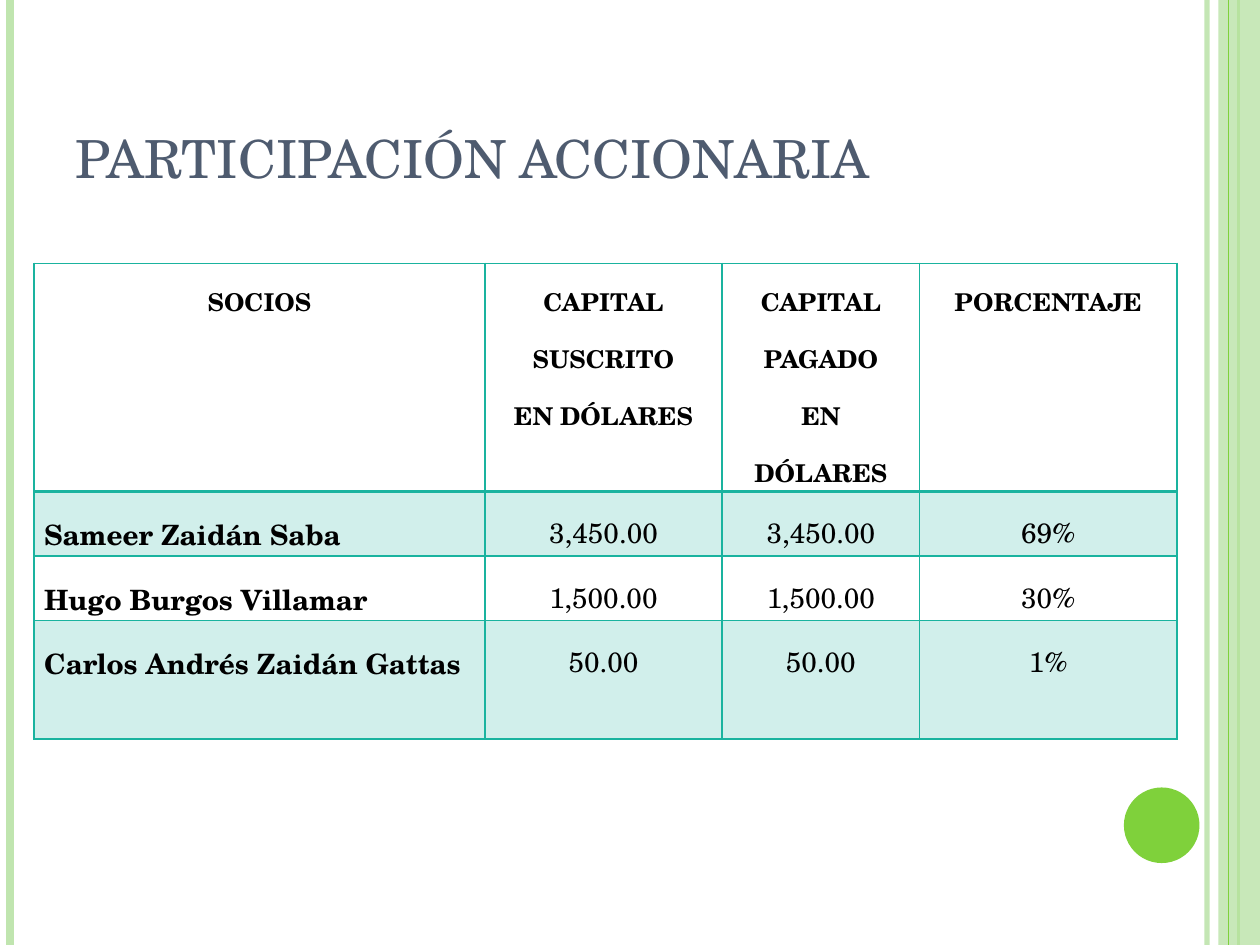
import dataclasses

import pptx
import pptx.dml.color
import pptx.enum.shapes
import pptx.enum.text
import pptx.oxml
import pptx.oxml.ns
import pptx.util

Inches = pptx.util.Inches
Pt = pptx.util.Pt
RGB = pptx.dml.color.RGBColor.from_string
ALIGN = pptx.enum.text.PP_ALIGN
SHAPE = pptx.enum.shapes.MSO_SHAPE


@dataclasses.dataclass(frozen=True)
class Theme:
    font: str = "TeX Gyre Schola"
    title: str = "4E5B6F"
    text: str = "000000"
    green: str = "7FD13B"
    pale_green: str = "C0E5AF"
    teal: str = "1AB39F"
    title_size: int = 30
    header_size: int = 14
    body_size: int = 16


THEME = Theme()

HEADERS = [
    ["SOCIOS"],
    ["CAPITAL SUSCRITO", "EN DÓLARES"],
    ["CAPITAL PAGADO", "EN DÓLARES"],
    ["PORCENTAJE"],
]
PARTNERS = [
    ("Sameer Zaidán Saba", "3,450.00", "3,450.00", "69%"),
    ("Hugo Burgos Villamar", "1,500.00", "1,500.00", "30%"),
    ("Carlos Andrés Zaidán Gattas", "50.00", "50.00", "1%"),
]
COLUMN_WIDTHS = [3.58, 1.88, 1.57, 2.04]
ROW_HEIGHTS = [1.42, 0.47, 0.47, 0.94]


def set_opacity(element, percent):
    """Make the colours inside an element partly transparent."""
    for color in element.iter(pptx.oxml.ns.qn("a:srgbClr")):
        alpha = color.makeelement(pptx.oxml.ns.qn("a:alpha"), {"val": str(percent * 1000)})
        color.append(alpha)


def add_stripe(slide, x, top, height, color, width, opacity=100):
    stripe = slide.shapes.add_connector(
        pptx.enum.shapes.MSO_CONNECTOR.STRAIGHT,
        Inches(x), Inches(top), Inches(x), Inches(top + height))
    stripe.line.color.rgb = RGB(color)
    stripe.line.width = Pt(width)
    properties = stripe._element.spPr
    if opacity < 100:
        set_opacity(properties, opacity)
    properties.append(properties.makeelement(pptx.oxml.ns.qn("a:effectLst"), {}))


def add_plain_shape(slide, kind, left, top, width, height, color):
    shape = slide.shapes.add_shape(
        kind, Inches(left), Inches(top), Inches(width), Inches(height))
    shape.shadow.inherit = False
    shape.fill.solid()
    shape.fill.fore_color.rgb = RGB(color)
    shape.line.fill.background()
    return shape


def add_frame(slide, left, top, width, height):
    """Side stripes, right band and dot of the page."""
    right = left + width
    add_stripe(slide, right - 0.42, top, height, THEME.pale_green, 3, opacity=93)
    add_stripe(slide, left + 0.08, top, height, THEME.pale_green, 4.5)
    add_stripe(slide, right - 0.17, top, height, THEME.green, 1.5)
    band = add_plain_shape(slide, SHAPE.RECTANGLE, right - 0.33, top, 0.33, height,
                           THEME.pale_green)
    set_opacity(band._element.spPr, 87)
    add_stripe(slide, right - 0.25, top, height, THEME.green, 0.75)
    add_plain_shape(slide, SHAPE.OVAL, right - 1.08, top + 6.25, 0.6, 0.6, THEME.green)


def style_paragraph(paragraph, size, color, align, bold=False):
    paragraph.alignment = align
    paragraph.font.name = THEME.font
    paragraph.font.size = Pt(size)
    paragraph.font.bold = bold
    paragraph.font.color.rgb = RGB(color)


def place_title(slide, left, top, width, height):
    title = slide.shapes.title
    title.left, title.top = Inches(left), Inches(top)
    title.width, title.height = Inches(width), Inches(height)
    title.text_frame.text = "PARTICIPACIÓN ACCIONARIA"
    title.text_frame.vertical_anchor = pptx.enum.text.MSO_ANCHOR.BOTTOM
    heading = title.text_frame.paragraphs[0]
    style_paragraph(heading, THEME.title_size, THEME.title, ALIGN.LEFT)
    # Small capitals
    heading.runs[0]._r.get_or_add_rPr().set("cap", "small")


def set_borders(cell, top, bottom):
    properties = cell._tc.get_or_add_tcPr()
    for side, width in (("L", 1), ("R", 1), ("T", top), ("B", bottom)):
        properties.append(pptx.oxml.parse_xml(
            f'<a:ln{side} {pptx.oxml.ns.nsdecls("a")} w="{Pt(width)}"><a:solidFill>'
            f'<a:srgbClr val="{THEME.teal}"/></a:solidFill></a:ln{side}>'))


def fill_cell(cell, lines, size, align, bold, shaded, top, bottom):
    cell.margin_left = cell.margin_right = Inches(0.08)
    cell.margin_top = cell.margin_bottom = 0
    set_borders(cell, top, bottom)
    if shaded:
        cell.fill.solid()
        cell.fill.fore_color.rgb = RGB(THEME.teal)
        set_opacity(cell._tc.tcPr.find(pptx.oxml.ns.qn("a:solidFill")), 20)
    else:
        cell.fill.background()
    cell.text_frame.text = "\n".join(lines)
    for paragraph in cell.text_frame.paragraphs:
        style_paragraph(paragraph, size, THEME.text, align, bold)
        paragraph.line_spacing = 1.5


def add_shareholders(slide, left, top, width, height):
    table = slide.shapes.add_table(
        len(ROW_HEIGHTS), len(COLUMN_WIDTHS),
        Inches(left), Inches(top), Inches(width), Inches(height)).table
    table.first_row = table.horz_banding = False
    for column, column_width in zip(table.columns, COLUMN_WIDTHS):
        column.width = Inches(column_width)
    for row, row_height in zip(table.rows, ROW_HEIGHTS):
        row.height = Inches(row_height)

    # Header row, with a heavier rule below it
    for c, lines in enumerate(HEADERS):
        fill_cell(table.cell(0, c), lines, THEME.header_size, ALIGN.CENTER,
                  bold=True, shaded=False, top=1, bottom=2)

    # Partner rows, shaded in turn
    for r, partner in enumerate(PARTNERS, start=1):
        for c, value in enumerate(partner):
            is_name = c == 0
            fill_cell(table.cell(r, c), [value], THEME.body_size,
                      ALIGN.JUSTIFY if is_name else ALIGN.CENTER,
                      bold=is_name, shaded=r % 2 == 1,
                      top=2 if r == 1 else 1, bottom=1)


def main():
    presentation = pptx.Presentation()
    presentation.slide_width, presentation.slide_height = Inches(10), Inches(7.5)
    slide = presentation.slides.add_slide(presentation.slide_layouts[5])
    add_frame(slide, 0, 0, 10, 7.5)
    place_title(slide, 0.5, 0.3, 8.17, 1.25)
    add_shareholders(slide, 0.27, 2.09, sum(COLUMN_WIDTHS), sum(ROW_HEIGHTS))
    presentation.save("out.pptx")


if __name__ == "__main__":
    main()
